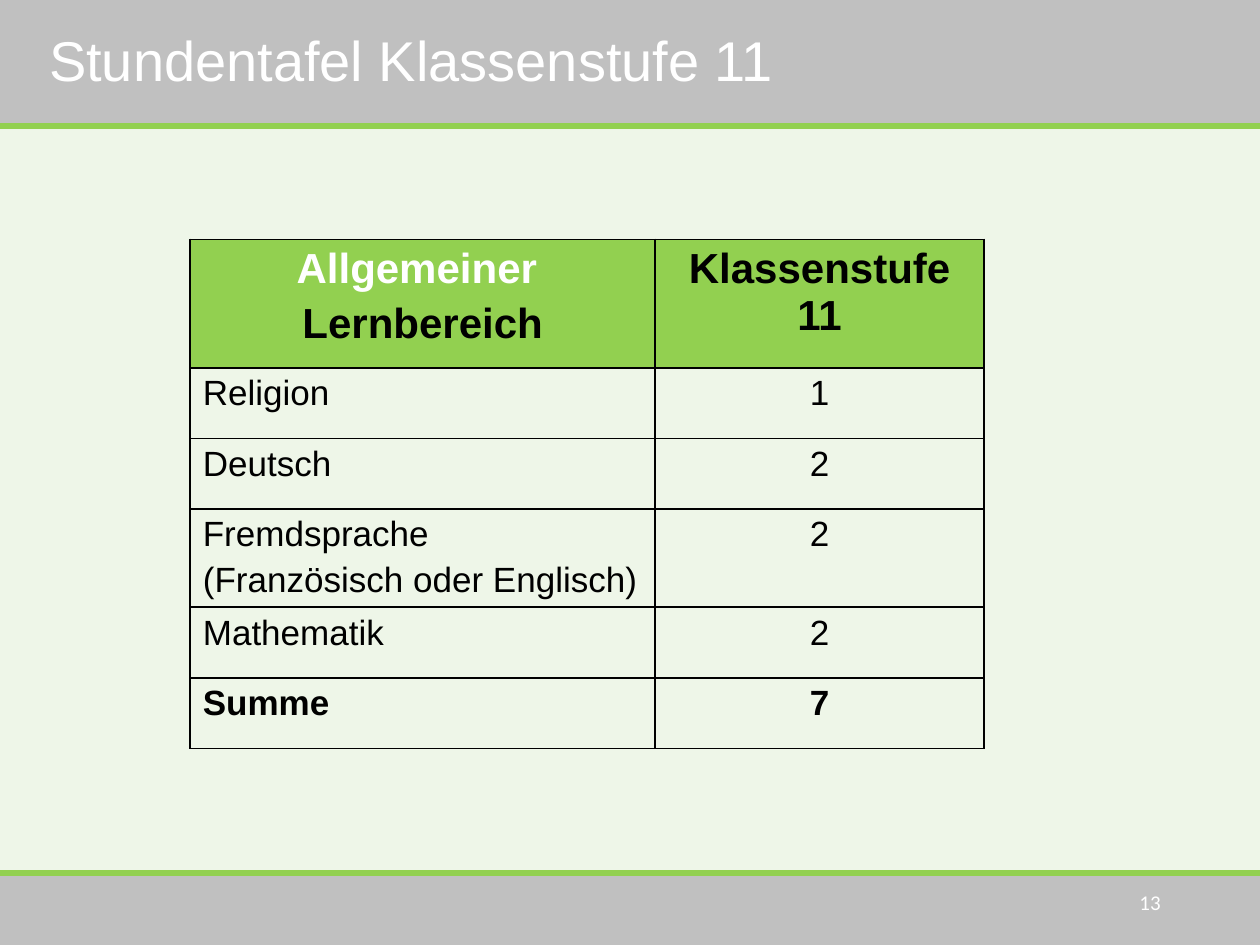
from lxml import etree
from pptx import Presentation
from pptx.dml.color import RGBColor
from pptx.enum.shapes import MSO_CONNECTOR as Connector, MSO_SHAPE as Shape
from pptx.enum.text import MSO_ANCHOR as Anchor, PP_ALIGN as Align
from pptx.oxml import parse_xml
from pptx.oxml.ns import nsdecls, qn
from pptx.util import Inches, Pt

COLORS = {"background": "EEF6E8", "bar": "C0C0C0", "green": "92D050",
          "white": "FFFFFF", "black": "000000"}
COLUMN_WIDTHS = [3.69, 2.61]
ROW_HEIGHTS = [1.02, 0.56, 0.56, 0.78, 0.56, 0.56]
HOURS = [
    (["Religion"], "1"),
    (["Deutsch"], "2"),
    (["Fremdsprache", "(Französisch oder Englisch)"], "2"),
    (["Mathematik"], "2"),
    (["Summe"], "7"),
]


def rgb(name):
    """Return the named colour."""
    return RGBColor.from_string(COLORS[name])


def write_text(frame, lines, *, size, colors=("black",), bold=False, font="Arial",
               align=Align.LEFT, line_spacing=None):
    """Write one paragraph per line; the last colour serves all remaining lines."""
    frame.word_wrap = True
    for index, line in enumerate(lines):
        paragraph = frame.add_paragraph() if index else frame.paragraphs[0]
        paragraph.alignment = align
        paragraph.line_spacing = line_spacing
        paragraph.space_before = Pt(size * 0.2 if index else 0)
        run = paragraph.add_run()
        run.text = line
        run.font.name = font
        run.font.size = Pt(size)
        run.font.bold = bold
        run.font.color.rgb = rgb(colors[min(index, len(colors) - 1)])


def add_bar(slide, top, height):
    """Add a full-width grey bar."""
    bar = slide.shapes.add_shape(Shape.RECTANGLE, 0, Inches(top), Inches(10), Inches(height))
    bar.shadow.inherit = False
    bar.fill.solid()
    bar.fill.fore_color.rgb = rgb("bar")
    bar.line.fill.background()


def add_rule(slide, top):
    """Add a full-width green line."""
    rule = slide.shapes.add_connector(
        Connector.STRAIGHT, 0, Inches(top), Inches(10), Inches(top))
    rule.line.color.rgb = rgb("green")
    rule.line.width = Pt(3.5)
    etree.SubElement(rule._element.spPr, qn("a:effectLst"))


def add_title(slide, text):
    """Place and format the title above the header bar."""
    title = slide.shapes.title
    title.left, title.top = Inches(0.29), Inches(0)
    title.width, title.height = Inches(6.69), Inches(1)
    title.text_frame.vertical_anchor = Anchor.MIDDLE
    write_text(title.text_frame, [text], size=32, colors=("white",), line_spacing=0.9)
    slide.shapes._spTree.append(title._element)


def add_page_number(slide, number):
    """Add the page number in the footer bar."""
    box = slide.shapes.add_textbox(Inches(7.06), Inches(6.96), Inches(2.25), Inches(0.4))
    box.text_frame.vertical_anchor = Anchor.MIDDLE
    write_text(box.text_frame, [number], size=12, colors=("white",),
               font="Calibri", align=Align.RIGHT)


def format_cell(cell, fill=None):
    """Give a cell black borders and an optional fill."""
    properties = cell._tc.get_or_add_tcPr()
    for side in ("lnL", "lnR", "lnT", "lnB"):
        properties.append(parse_xml(
            f'<a:{side} {nsdecls("a")} w="{Pt(1)}"><a:solidFill>'
            f'<a:srgbClr val="{COLORS["black"]}"/></a:solidFill></a:{side}>'))
    if fill:
        cell.fill.solid()
        cell.fill.fore_color.rgb = rgb(fill)
    else:
        cell.fill.background()


def add_timetable(slide):
    """Add the table of weekly hours."""
    table = slide.shapes.add_table(
        len(ROW_HEIGHTS), len(COLUMN_WIDTHS), Inches(1.51), Inches(1.9),
        Inches(sum(COLUMN_WIDTHS)), Inches(sum(ROW_HEIGHTS))).table
    table.horz_banding = False
    for column, width in zip(table.columns, COLUMN_WIDTHS):
        column.width = Inches(width)
    for row, height in zip(table.rows, ROW_HEIGHTS):
        row.height = Inches(height)
    for cell in table.iter_cells():
        format_cell(cell)
    for cell in table.rows[0].cells:
        cell.fill.solid()
        cell.fill.fore_color.rgb = rgb("green")
    heading = {"size": 24, "bold": True, "align": Align.CENTER}
    write_text(table.cell(0, 0).text_frame, ["Allgemeiner ", "Lernbereich"],
               colors=("white", "black"), **heading)
    write_text(table.cell(0, 1).text_frame, ["Klassenstufe 11"], **heading)
    for row, (subject, hours) in enumerate(HOURS, start=1):
        bold = row == len(HOURS)
        write_text(table.cell(row, 0).text_frame, subject, size=20, bold=bold)
        write_text(table.cell(row, 1).text_frame, [hours], size=20, bold=bold,
                   align=Align.CENTER)


def main():
    """Build and save the slide."""
    presentation = Presentation()
    presentation.slide_width, presentation.slide_height = Inches(10), Inches(7.5)
    slide = presentation.slides.add_slide(presentation.slide_layouts[5])
    slide.background.fill.solid()
    slide.background.fill.fore_color.rgb = rgb("background")
    add_bar(slide, 6.95, 0.55)
    add_bar(slide, -0.01, 1.01)
    add_rule(slide, 1)
    add_rule(slide, 6.93)
    add_title(slide, "Stundentafel Klassenstufe 11")
    add_timetable(slide)
    add_page_number(slide, "13")
    presentation.save("out.pptx")


if __name__ == "__main__":
    main()
